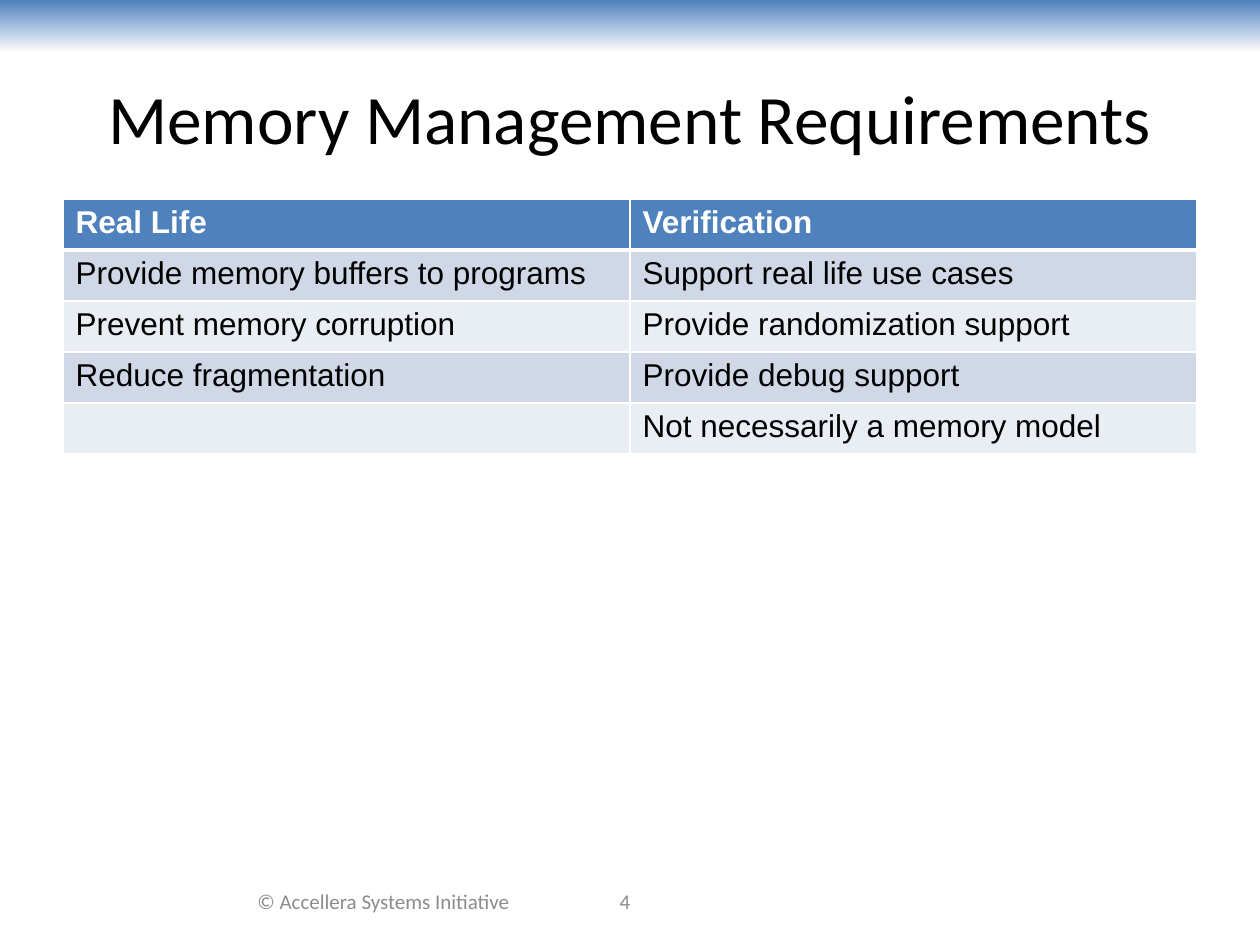
from lxml import etree
from pptx import Presentation
from pptx.dml.color import RGBColor
from pptx.enum.shapes import MSO_SHAPE
from pptx.enum.text import MSO_ANCHOR, PP_ALIGN
from pptx.oxml.ns import qn
from pptx.util import Pt

EMU_PER_PX = 914400 / 126
COLORS = {
    "accent": "4F81BD",
    "white": "FFFFFF",
    "black": "000000",
    "band_dark": "D0D8E8",
    "band_light": "E9EDF4",
    "footer": "8C8C8C",
}
ROWS = [
    ("Real Life", "Verification"),
    ("Provide memory buffers to programs", "Support real life use cases"),
    ("Prevent memory corruption", "Provide randomization support"),
    ("Reduce fragmentation", "Provide debug support"),
    ("", "Not necessarily a memory model"),
]
ROW_HEIGHT = 51


def px(*lengths):
    return [round(length * EMU_PER_PX) for length in lengths]


def rgb(name):
    return RGBColor.from_string(COLORS[name])


def add_run(paragraph, text, size, font_name, color, bold=False):
    run = paragraph.add_run()
    run.text = text
    run.font.size = Pt(size)
    run.font.name = font_name
    run.font.bold = bold
    run.font.color.rgb = rgb(color)


def write_centered(shape, text, size, color):
    frame = shape.text_frame
    frame.word_wrap = True
    frame.vertical_anchor = MSO_ANCHOR.MIDDLE
    paragraph = frame.paragraphs[0]
    paragraph.alignment = PP_ALIGN.CENTER
    add_run(paragraph, text, size, "Calibri", color)


def add_title(slide, text):
    title = slide.shapes.title
    title.left, title.top, title.width, title.height = px(63, 38, 1134, 158)
    write_centered(title, text, 39.6, "black")


def add_top_band(slide):
    band = slide.shapes.add_shape(MSO_SHAPE.RECTANGLE, *px(0, 0, 1260, 53))
    band.shadow.inherit = False
    band.line.fill.background()
    band.fill.gradient()
    band.fill.gradient_angle = 270
    for stop, color in zip(band.fill.gradient_stops, ("accent", "white")):
        stop.color.rgb = rgb(color)
    slide.shapes.title.element.addprevious(band.element)


def add_footer_text(slide, text, left, width):
    box = slide.shapes.add_textbox(*px(left, 876, width, 50))
    write_centered(box, text, 12, "footer")


def set_borders(cell, widths):
    properties = cell._tc.get_or_add_tcPr()
    for index, (side, width) in enumerate(widths.items()):
        line = etree.Element(qn(f"a:ln{side}"), w=str(Pt(width)))
        fill = etree.SubElement(line, qn("a:solidFill"))
        etree.SubElement(fill, qn("a:srgbClr"), val=COLORS["white"])
        properties.insert(index, line)


def add_requirements_table(slide):
    size = px(63, 199, 1134, ROW_HEIGHT * len(ROWS))
    table = slide.shapes.add_table(len(ROWS), len(ROWS[0]), *size).table
    for row_index, texts in enumerate(ROWS):
        is_header = row_index == 0
        band = "band_dark" if row_index % 2 else "band_light"
        widths = {"L": 1, "R": 1, "T": 3 if row_index == 1 else 1, "B": 3 if is_header else 1}
        for column_index, text in enumerate(texts):
            cell = table.cell(row_index, column_index)
            cell.fill.solid()
            cell.fill.fore_color.rgb = rgb("accent" if is_header else band)
            set_borders(cell, widths)
            if text:
                color = "white" if is_header else "black"
                add_run(cell.text_frame.paragraphs[0], text, 18, "Arial", color, is_header)


def main():
    presentation = Presentation()
    presentation.slide_width, presentation.slide_height = px(1260, 945)
    slide = presentation.slides.add_slide(presentation.slide_layouts[5])
    add_top_band(slide)
    add_title(slide, "Memory Management Requirements")
    add_requirements_table(slide)
    add_footer_text(slide, "© Accellera Systems Initiative", 231, 305)
    add_footer_text(slide, "4", 504, 242)
    presentation.save("out.pptx")


if __name__ == "__main__":
    main()
